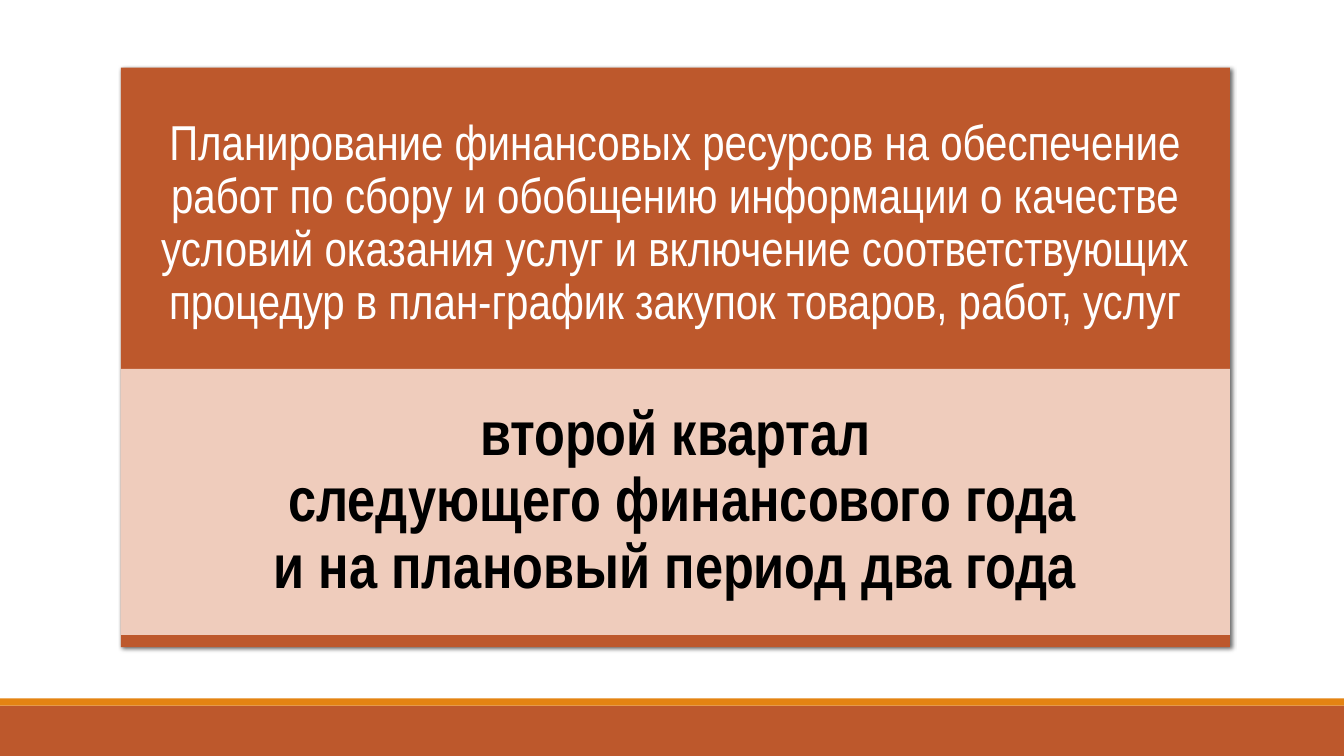
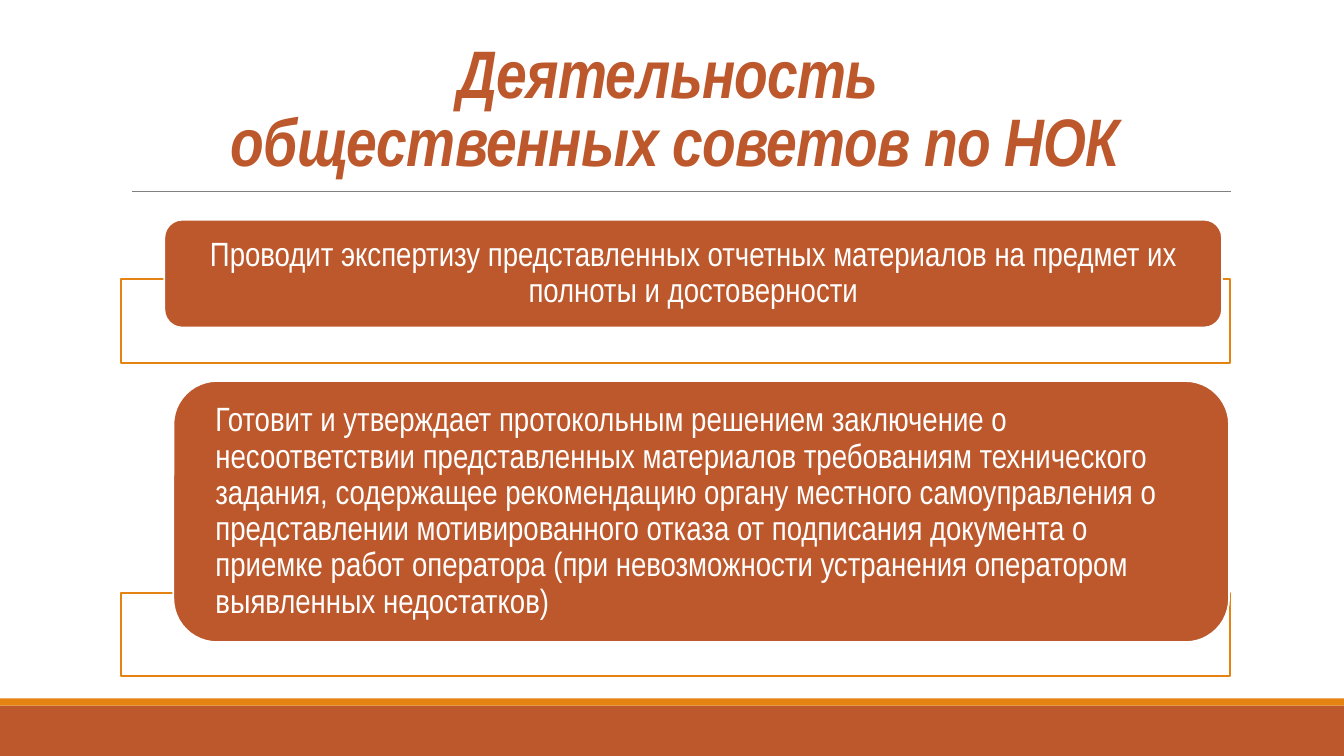
from dataclasses import dataclass

from lxml.etree import SubElement
from pptx import Presentation
from pptx.dml.color import RGBColor
from pptx.enum.shapes import MSO_CONNECTOR, MSO_SHAPE
from pptx.enum.text import MSO_ANCHOR, PP_ALIGN
from pptx.oxml.ns import qn
from pptx.util import Inches, Pt


@dataclass(frozen=True)
class Theme:
    font: str = "Arial Narrow"
    rust: str = "BD582C"
    orange: str = "E48312"
    blush: str = "F5D9CC"
    gray: str = "808080"
    white: str = "FFFFFF"
    black: str = "000000"
    title_size: int = 48
    deadline_size: int = 44
    task_size: int = 35
    body_size: int = 24
    panel_opacity: int = 90


THEME = Theme()

# Content
TASK = (
    "Планирование финансовых ресурсов на обеспечение работ по сбору и обобщению "
    "информации о качестве условий оказания услуг и включение соответствующих "
    "процедур в план-график закупок товаров, работ, услуг"
)
DEADLINE = "второй квартал\v следующего финансового года\v и на плановый период два года "
TITLE = "Деятельность \vобщественных советов по НОК"
# Text, alignment, label box, top of the frame behind it
DUTIES = [
    (
        "Проводит экспертизу представленных отчетных материалов на предмет их "
        "полноты и достоверности",
        PP_ALIGN.CENTER, (1.63, 2.18, 10.49, 1.07), 2.77,
    ),
    (
        "Готовит и утверждает протокольным решением заключение о несоответствии "
        "представленных материалов требованиям технического задания, содержащее "
        "рекомендацию органу местного самоуправления о представлении мотивированного "
        "отказа от подписания документа о приемке работ оператора (при невозможности "
        "устранения оператором выявленных недостатков)",
        PP_ALIGN.LEFT, (1.72, 3.78, 10.47, 2.59), 5.88,
    ),
]

# Layout in inches
SLIDE_WIDTH, SLIDE_HEIGHT = 13.33, 7.5
PANEL_LEFT, PANEL_WIDTH = 1.2, 11
BANDS = [(7, 0.5, THEME.rust), (6.93, 0.07, THEME.orange)]


def add_box(slide, box, fill, line=None, line_width=1.25, kind=MSO_SHAPE.RECTANGLE,
            opacity=100):
    shape = slide.shapes.add_shape(kind, *map(Inches, box))
    shape.shadow.inherit = False
    shape.fill.solid()
    shape.fill.fore_color.rgb = RGBColor.from_string(fill)
    if line:
        shape.line.color.rgb = RGBColor.from_string(line)
        shape.line.width = Pt(line_width)
    else:
        shape.line.fill.background()
    if opacity < 100:
        color = shape._element.spPr.find(qn("a:solidFill"))[0]
        SubElement(color, qn("a:alpha"), val=str(opacity * 1000))
    return shape


def add_shadow(shape):
    effects = shape._element.spPr.find(qn("a:effectLst"))
    shadow = SubElement(effects, qn("a:outerShdw"), blurRad=str(Pt(3)), dist=str(Pt(2)),
                        dir=str(45 * 60000), algn="tl", rotWithShape="0")
    color = SubElement(shadow, qn("a:srgbClr"), val=THEME.black)
    SubElement(color, qn("a:alpha"), val="60000")


def set_text(shape, text, size, color, insets, align=PP_ALIGN.CENTER,
             anchor=MSO_ANCHOR.MIDDLE, spacing=0.9, bold=False, italic=False):
    frame = shape.text_frame
    frame.word_wrap = True
    frame.vertical_anchor = anchor
    frame.margin_left = frame.margin_right = Inches(insets[0])
    frame.margin_top = frame.margin_bottom = Inches(insets[1])
    paragraph = frame.paragraphs[0]
    paragraph.text = text
    paragraph.alignment = align
    paragraph.line_spacing = spacing
    font = paragraph.font
    font.name, font.size = THEME.font, Pt(size)
    font.bold, font.italic = bold, italic
    font.color.rgb = RGBColor.from_string(color)
    return paragraph


def add_base_slide(presentation):
    slide = presentation.slides.add_slide(presentation.slide_layouts[6])
    for top, height, color in BANDS:
        add_box(slide, (0, top, SLIDE_WIDTH, height), color)
    return slide


def add_title(slide, text):
    title = slide.shapes.add_textbox(*map(Inches, (0.67, 0.24, 12.06, 1.6)))
    paragraph = set_text(title, text, THEME.title_size, THEME.rust, (0.1, 0.05),
                         anchor=MSO_ANCHOR.BOTTOM, spacing=0.85, bold=True, italic=True)
    for run in paragraph.runs:
        run.font._element.set("spc", "-50")
    rule = slide.shapes.add_connector(
        MSO_CONNECTOR.STRAIGHT, *map(Inches, (1.31, 1.9, 12.21, 1.9)))
    rule.line.color.rgb = RGBColor.from_string(THEME.gray)
    rule.line.width = Pt(0.5)
    SubElement(rule._element.spPr, qn("a:effectLst"))


def build_planning_slide(presentation):
    slide = add_base_slide(presentation)
    # Card with the task on top
    card = add_box(slide, (PANEL_LEFT, 0.67, PANEL_WIDTH, 5.75), THEME.rust)
    add_shadow(card)
    task = slide.shapes.add_textbox(*map(Inches, (PANEL_LEFT, 0.67, PANEL_WIDTH, 3.1)))
    set_text(task, TASK, THEME.task_size, THEME.white, (0.27, 0.27))
    # Deadline panel
    deadline = add_box(slide, (PANEL_LEFT, 3.66, PANEL_WIDTH, 2.64), THEME.blush,
                       opacity=THEME.panel_opacity)
    set_text(deadline, DEADLINE, THEME.deadline_size, THEME.black, (0.34, 0.06), bold=True)


def build_duties_slide(presentation):
    slide = add_base_slide(presentation)
    add_title(slide, TITLE)
    for text, align, label_box, frame_top in DUTIES:
        add_box(slide, (PANEL_LEFT, frame_top, PANEL_WIDTH, 0.83), THEME.white,
                THEME.orange, opacity=THEME.panel_opacity)
        label = add_box(slide, label_box, THEME.rust, THEME.white,
                        kind=MSO_SHAPE.ROUNDED_RECTANGLE)
        set_text(label, text, THEME.body_size, THEME.white, (0.29, 0), align)


def main():
    presentation = Presentation()
    presentation.slide_width = Inches(SLIDE_WIDTH)
    presentation.slide_height = Inches(SLIDE_HEIGHT)
    build_planning_slide(presentation)
    build_duties_slide(presentation)
    presentation.save("out.pptx")


if __name__ == "__main__":
    main()
